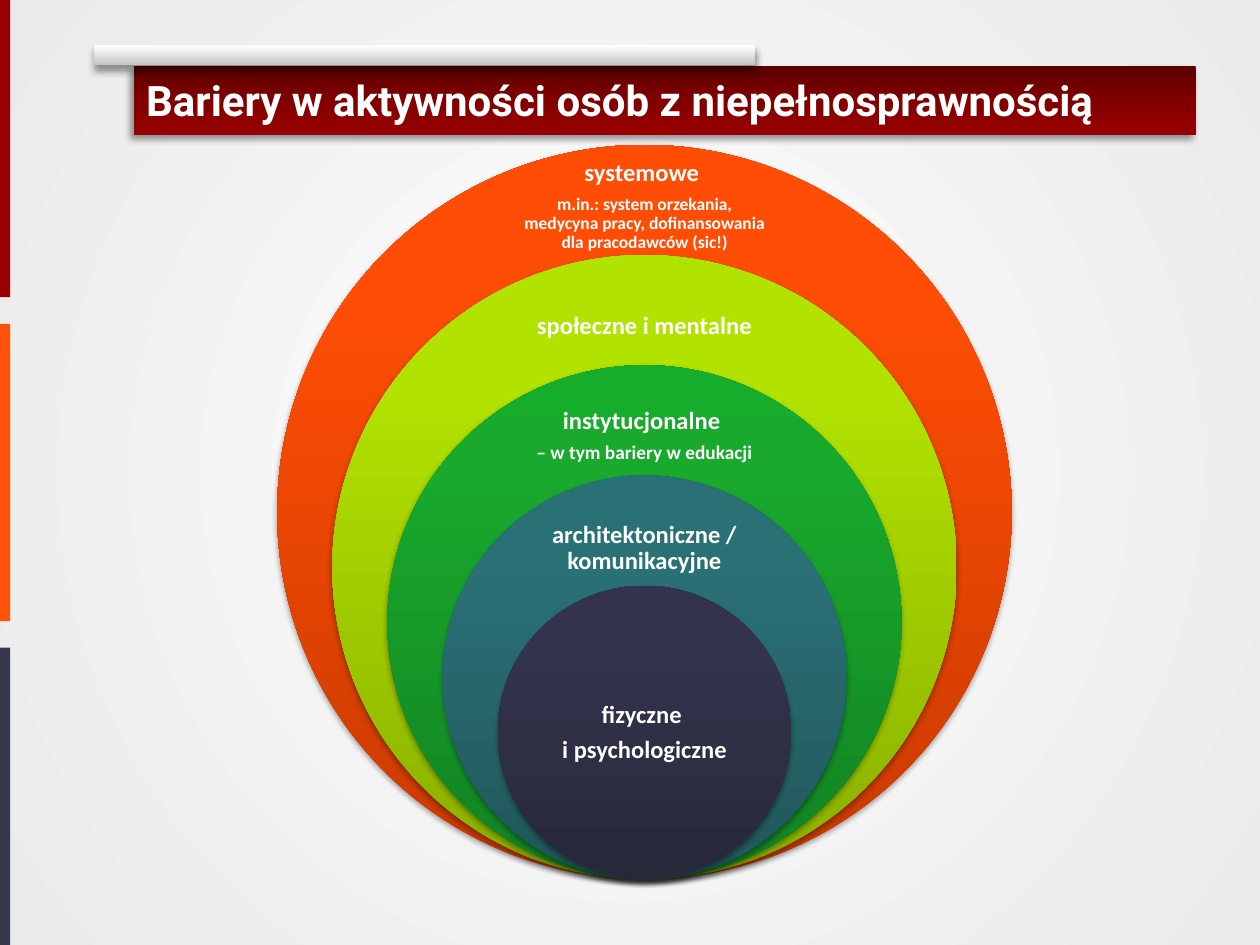
import pptx
import pptx.dml.color
import pptx.enum.shapes
import pptx.enum.text
import pptx.oxml
import pptx.oxml.ns
import pptx.util
from lxml import etree

RGBColor = pptx.dml.color.RGBColor
Inches = pptx.util.Inches
Pt = pptx.util.Pt
qn = pptx.oxml.ns.qn
SHAPE = pptx.enum.shapes.MSO_SHAPE
ALIGN = pptx.enum.text.PP_ALIGN
ANCHOR = pptx.enum.text.MSO_ANCHOR

WHITE = RGBColor(0xFF, 0xFF, 0xFF)
PALE = RGBColor(0xEA, 0xEA, 0xEA)
SILVER = RGBColor(0xC4, 0xC4, 0xC4)
CRIMSON = RGBColor(0x99, 0x00, 0x00)
MAROON = RGBColor(0x81, 0x00, 0x00)
DARK_MAROON = RGBColor(0x5B, 0x00, 0x00)
ORANGE = RGBColor(0xFF, 0x53, 0x0D)
SLATE = RGBColor(0x38, 0x38, 0x4C)
BLACK = RGBColor(0x00, 0x00, 0x00)

RING_COLOURS = [
    (RGBColor(0xC8, 0x3A, 0x00), RGBColor(0xFF, 0x4D, 0x05), RGBColor(0xFF, 0x4E, 0x06)),
    (RGBColor(0x89, 0xAF, 0x00), RGBColor(0xB2, 0xE3, 0x00), RGBColor(0xB2, 0xE4, 0x00)),
    (RGBColor(0x13, 0x82, 0x23), RGBColor(0x18, 0xA9, 0x2D), RGBColor(0x16, 0xAD, 0x2C)),
    (RGBColor(0x21, 0x57, 0x5B), RGBColor(0x2A, 0x71, 0x76), RGBColor(0x29, 0x73, 0x78)),
    (RGBColor(0x28, 0x28, 0x3B), RGBColor(0x33, 0x33, 0x4D), RGBColor(0x33, 0x33, 0x4D)),
]

BARRIERS = [
    ([("systemowe ", 14),
      ("m.in.: system orzekania, medycyna pracy, dofinansowania dla pracodawców (sic!)", 10)],
     2.19, 0.49, 0.58),
    ([("społeczne i mentalne", 14)], 2.14, 0.57, 0.57),
    ([("instytucjonalne ", 14), ("– w tym bariery w edukacji", 11)], 2.11, 0.56, 0.56),
    ([("architektoniczne /\nkomunikacyjne", 14)], 1.73, 0.58, 0.58),
    ([("fizyczne ", 14), ("i psychologiczne", 14)], 1.65, 1.17, 1.17),
]


def apply_gradient(fill, owner, stops, angle=None):
    fill.gradient()
    gradient = owner.find(".//" + qn("a:gradFill"))
    for child in list(gradient):
        gradient.remove(child)
    stop_list = etree.SubElement(gradient, qn("a:gsLst"))
    for position, colour in stops:
        stop = etree.SubElement(stop_list, qn("a:gs"), pos=str(position * 1000))
        etree.SubElement(stop, qn("a:srgbClr"), val=str(colour))
    if angle is None:
        radial = etree.SubElement(gradient, qn("a:path"), path="circle")
        etree.SubElement(radial, qn("a:fillToRect"), l="50000", t="50000", r="50000", b="50000")
    else:
        etree.SubElement(gradient, qn("a:lin"), ang=str(angle * 60000), scaled="0")


def cast_shadow(shape, alpha, blur, distance, direction):
    shape.shadow.inherit = False
    effects = shape._element.spPr.find(qn("a:effectLst"))
    outer = etree.SubElement(effects, qn("a:outerShdw"), blurRad=str(int(Pt(blur))),
                             dist=str(int(Pt(distance))), dir=str(direction * 60000),
                             algn="ctr", rotWithShape="0")
    colour = etree.SubElement(outer, qn("a:srgbClr"), val=str(BLACK))
    etree.SubElement(colour, qn("a:alpha"), val=str(alpha * 1000))


def add_plain(slide, preset, left, top, width, height):
    shape = slide.shapes.add_shape(preset, Inches(left), Inches(top), Inches(width), Inches(height))
    shape.line.fill.background()
    shape.shadow.inherit = False
    return shape


def add_side_stripes(slide, left, top, width, height):
    gap = 0.21
    stripe_height = (height - 2 * gap) / 3
    for row, colour in enumerate((CRIMSON, ORANGE, SLATE)):
        stripe = add_plain(slide, SHAPE.RECTANGLE, left, top + row * (stripe_height + gap),
                           width, stripe_height)
        stripe.fill.solid()
        stripe.fill.fore_color.rgb = colour


def add_header(slide, left, top, width, height):
    tab_height, indent = 0.16, 0.31
    tab = add_plain(slide, SHAPE.RECTANGLE, left, top, 0.6 * width, tab_height)
    apply_gradient(tab.fill, tab._element.spPr, [(0, SILVER), (100, WHITE)], 270)
    cast_shadow(tab, 40, 4, 3, 90)

    title = slide.shapes.title
    title.left, title.top = Inches(left + indent), Inches(top + tab_height)
    title.width, title.height = Inches(width - indent), Inches(height - tab_height)
    apply_gradient(title.fill, title._element.spPr,
                   [(0, DARK_MAROON), (50, MAROON), (100, CRIMSON)], 90)
    cast_shadow(title, 40, 4, 3, 135)
    frame = title.text_frame
    frame.auto_size = pptx.enum.text.MSO_AUTO_SIZE.NONE
    frame.vertical_anchor = ANCHOR.MIDDLE
    paragraph = frame.paragraphs[0]
    paragraph.alignment = ALIGN.LEFT
    add_run(paragraph, "Bariery w aktywności osób z niepełnosprawnością", 24, "Roboto")


def add_run(paragraph, wording, size, font_name):
    run = paragraph.add_run()
    run.text = wording
    run.font.name = font_name
    run.font.size = Pt(size)
    run.font.bold = True
    run.font.color.rgb = WHITE


def add_label(slide, lines, left, top, width, height):
    label = slide.shapes.add_textbox(Inches(left), Inches(top), Inches(width), Inches(height))
    frame = label.text_frame
    frame.word_wrap = True
    frame.vertical_anchor = ANCHOR.MIDDLE
    frame.margin_left = frame.margin_right = Inches(0.11)
    frame.margin_top = frame.margin_bottom = Inches(0.11)
    for index, (wording, size) in enumerate(lines):
        paragraph = frame.add_paragraph() if index else frame.paragraphs[0]
        paragraph.alignment = ALIGN.CENTER
        paragraph.line_spacing = 0.9
        paragraph.space_after = Pt(0.35 * size)
        for part, piece in enumerate(wording.split("\n")):
            if part:
                paragraph.add_line_break()
            add_run(paragraph, piece, size, "Calibri")


def add_nested_rings(slide, left, top, size):
    centre, bottom = left + size / 2, top + size
    for level, (colours, barrier) in enumerate(zip(RING_COLOURS, BARRIERS)):
        lines, label_width, label_middle, label_height = barrier
        diameter = size * (1 - 0.15 * level)
        ring_top = bottom - diameter
        ring = add_plain(slide, SHAPE.OVAL, centre - diameter / 2, ring_top, diameter, diameter)
        apply_gradient(ring.fill, ring._element.spPr, list(zip((0, 80, 100), colours)), 270)
        cast_shadow(ring, 35, 3.1, 1.8, 90)
        add_label(slide, lines, centre - label_width / 2,
                  ring_top + label_middle - label_height / 2, label_width, label_height)


def main():
    deck = pptx.Presentation()
    deck.slide_width, deck.slide_height = Inches(10), Inches(7.5)
    slide = deck.slides.add_slide(deck.slide_layouts[5])
    apply_gradient(slide.background.fill, slide._element, [(0, WHITE), (100, PALE)])
    add_side_stripes(slide, 0, 0, 0.08, 7.5)
    add_header(slide, 0.75, 0.36, 8.74, 0.71)
    add_nested_rings(slide, 2.2, 1.15, 5.83)
    deck.save("out.pptx")


if __name__ == "__main__":
    main()
